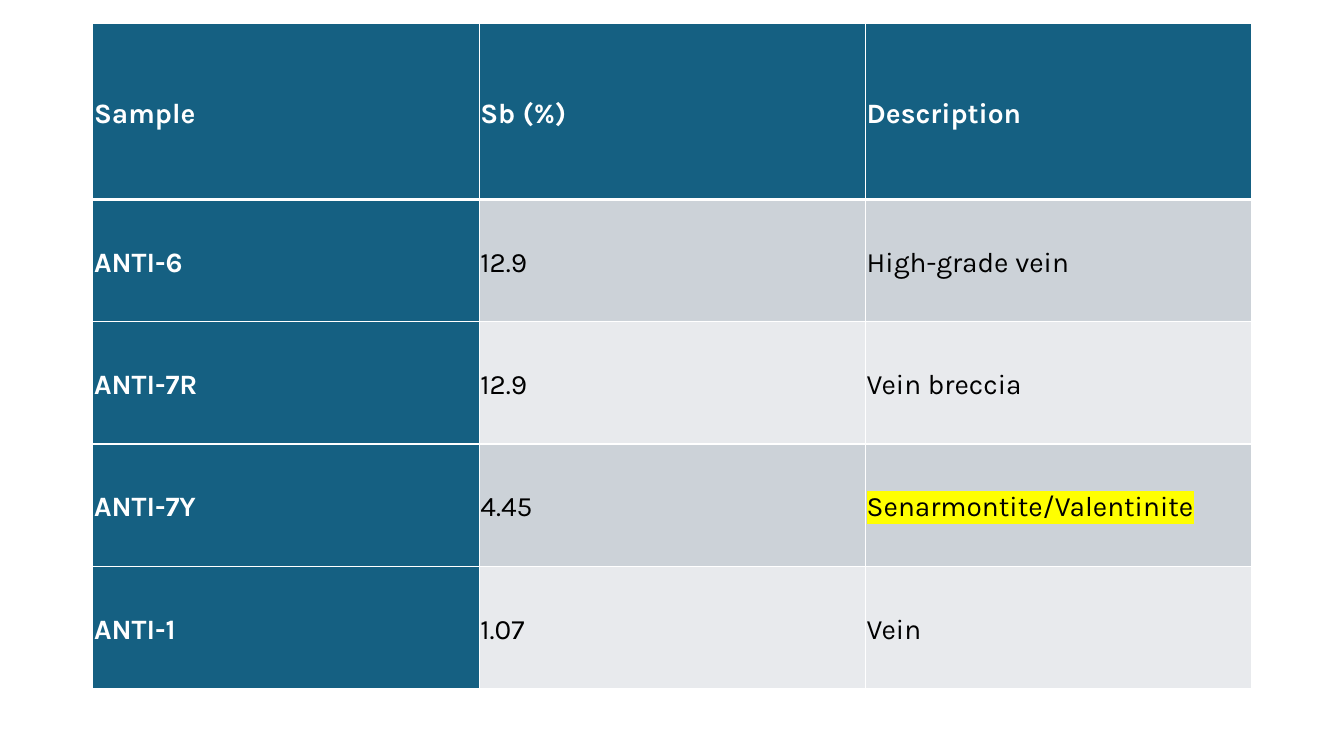
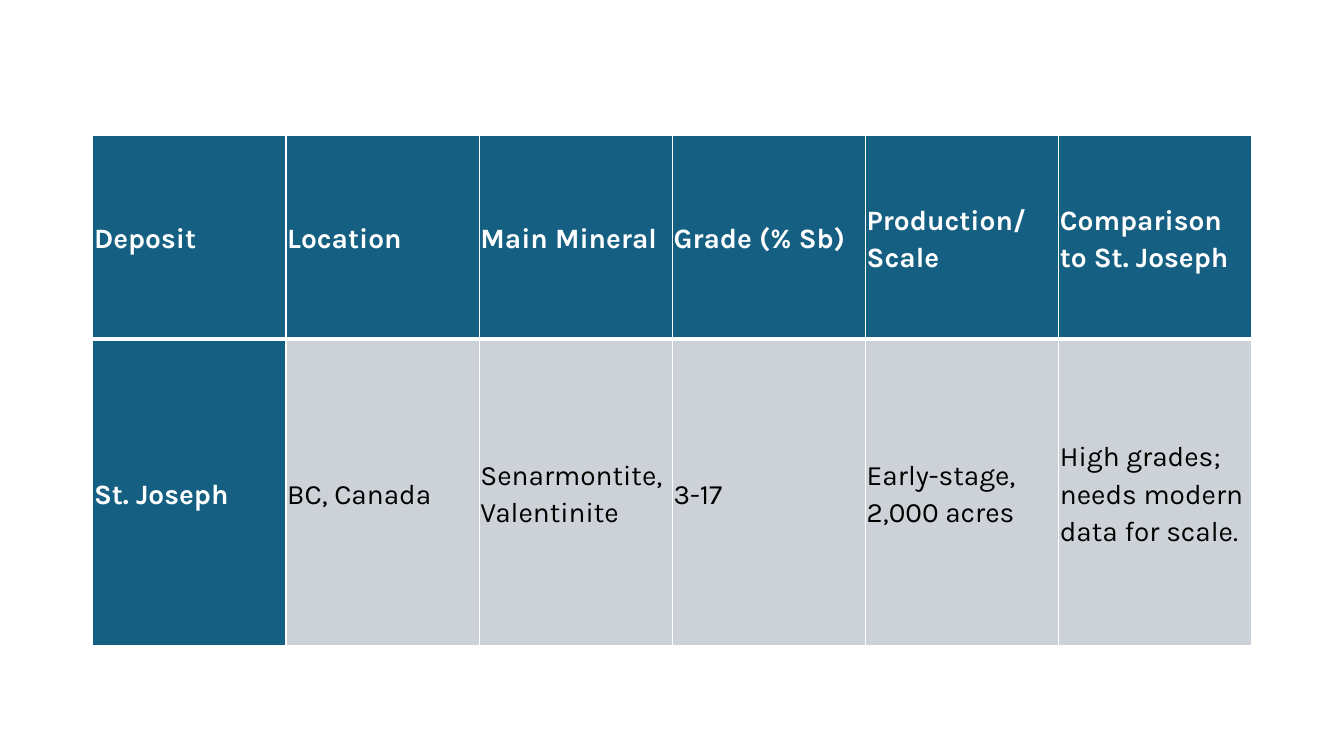
from lxml.etree import Element, SubElement
from pptx import Presentation
from pptx.dml.color import RGBColor as RGB
from pptx.enum.text import MSO_ANCHOR as ANCHOR, PP_ALIGN as ALIGN
from pptx.oxml.ns import qn
from pptx.util import Cm, Pt

COLORS = {
    "head": "156082",
    "band_dark": "CCD2D8",
    "band_light": "E8EAED",
    "line": "FFFFFF",
    "head_text": "FFFFFF",
    "body_text": "000000",
    "mark": "FFFF00",
}
FONT, SIZE = "Karla", Pt(20)
INSET = Cm(0.03)
THIN, THICK = Pt(1), Pt(3)
LEFT, WIDTH = 2.34, 29.21

SAMPLES = [
    ["Sample", "Sb (%)", "Description"],
    ["ANTI-6", "12.9", "High-grade vein"],
    ["ANTI-7R", "12.9", "Vein breccia"],
    ["ANTI-7Y", "4.45", "Senarmontite/Valentinite"],
    ["ANTI-1", "1.07", "Vein"],
]
DEPOSITS = [
    ["Deposit", "Location", "Main Mineral", "Grade (% Sb)",
     "Production/Scale", "Comparison to St. Joseph"],
    ["St. Joseph", "BC, Canada", "Senarmontite, Valentinite", "3-17",
     "Early-stage, 2,000 acres", "High grades; needs modern data for scale."],
]


def add_color(parent, tag, color):
    """Append a color-carrying element to an XML parent."""
    SubElement(SubElement(parent, qn(tag)), qn("a:srgbClr"), val=color)


def set_borders(cell, row):
    """Draw thin cell borders, with a thick rule under the header row."""
    widths = {
        "a:lnL": THIN,
        "a:lnR": THIN,
        "a:lnT": THICK if row == 1 else THIN,
        "a:lnB": THICK if row == 0 else THIN,
    }
    tc_pr = cell._tc.get_or_add_tcPr()
    for tag, width in widths.items():
        add_color(SubElement(tc_pr, qn(tag), w=str(width)), "a:solidFill", COLORS["line"])


def highlight(r):
    """Mark a run with the highlight color."""
    mark = Element(qn("a:highlight"))
    SubElement(mark, qn("a:srgbClr"), val=COLORS["mark"])
    r._r.get_or_add_rPr().find(qn("a:solidFill")).addnext(mark)


def format_cell(cell, text, row, col):
    """Fill in one cell according to its place in the table."""
    is_head = row == 0 or col == 0
    band = "band_dark" if row % 2 else "band_light"
    cell.margin_left = cell.margin_right = INSET
    cell.margin_top = cell.margin_bottom = INSET
    cell.vertical_anchor = ANCHOR.MIDDLE
    set_borders(cell, row)
    cell.fill.solid()
    cell.fill.fore_color.rgb = RGB.from_string(COLORS["head" if is_head else band])

    p = cell.text_frame.paragraphs[0]
    p.text = text
    p.alignment = ALIGN.LEFT
    p.line_spacing = 1.15
    p.space_after = Pt(8)
    font = p.runs[0].font
    font.name, font.size, font.bold = FONT, SIZE, is_head
    font.color.rgb = RGB.from_string(COLORS["head_text" if is_head else "body_text"])


def add_data_table(s, rows, box, head_height):
    """Place a table in a box, sharing the space below its header equally."""
    left, top, width, height = box
    n_cols = len(rows[0])
    table = s.shapes.add_table(
        len(rows), n_cols, Cm(left), Cm(top), Cm(width), Cm(height)).table
    for column in table.columns:
        column.width = Cm(width / n_cols)
    body_height = (height - head_height) / (len(rows) - 1)
    for i, texts in enumerate(rows):
        table.rows[i].height = Cm(body_height if i else head_height)
        for j, text in enumerate(texts):
            format_cell(table.cell(i, j), text, i, j)
    return table


def add_samples_slide(prs):
    """Add the slide of sample assays."""
    s = prs.slides.add_slide(prs.slide_layouts[6])
    table = add_data_table(s, SAMPLES, (LEFT, 0.58, WIDTH, 16.77), 4.45)
    highlight(table.cell(3, 2).text_frame.paragraphs[0].runs[0])


def add_deposits_slide(prs):
    """Add the slide that compares deposits."""
    s = prs.slides.add_slide(prs.slide_layouts[6])
    add_data_table(s, DEPOSITS, (LEFT, 3.4, WIDTH, 12.86), 5.15)


def main():
    """Build and save the presentation."""
    prs = Presentation()
    prs.slide_width, prs.slide_height = Cm(33.87), Cm(19.05)
    add_samples_slide(prs)
    add_deposits_slide(prs)
    prs.save("out.pptx")


if __name__ == "__main__":
    main()
